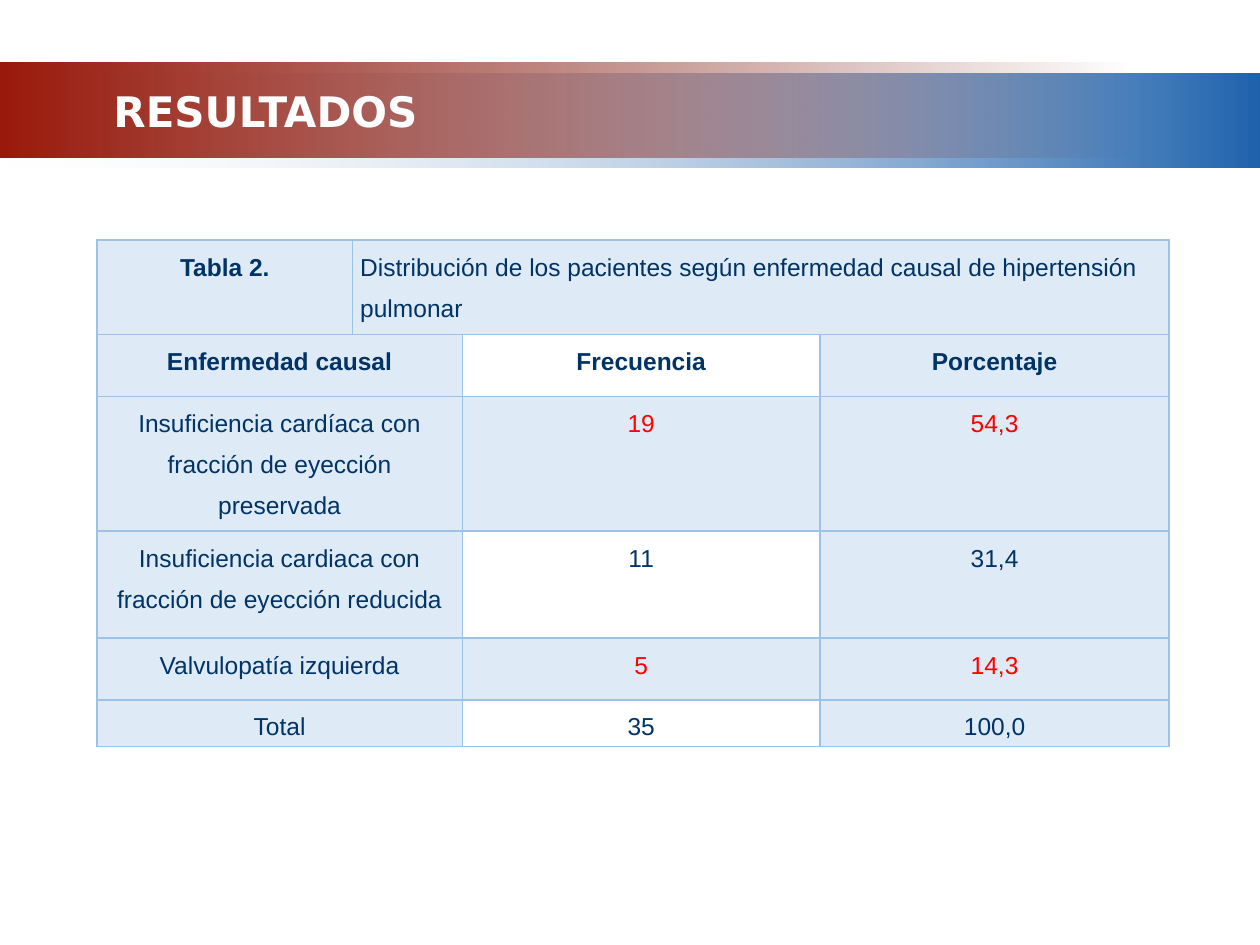
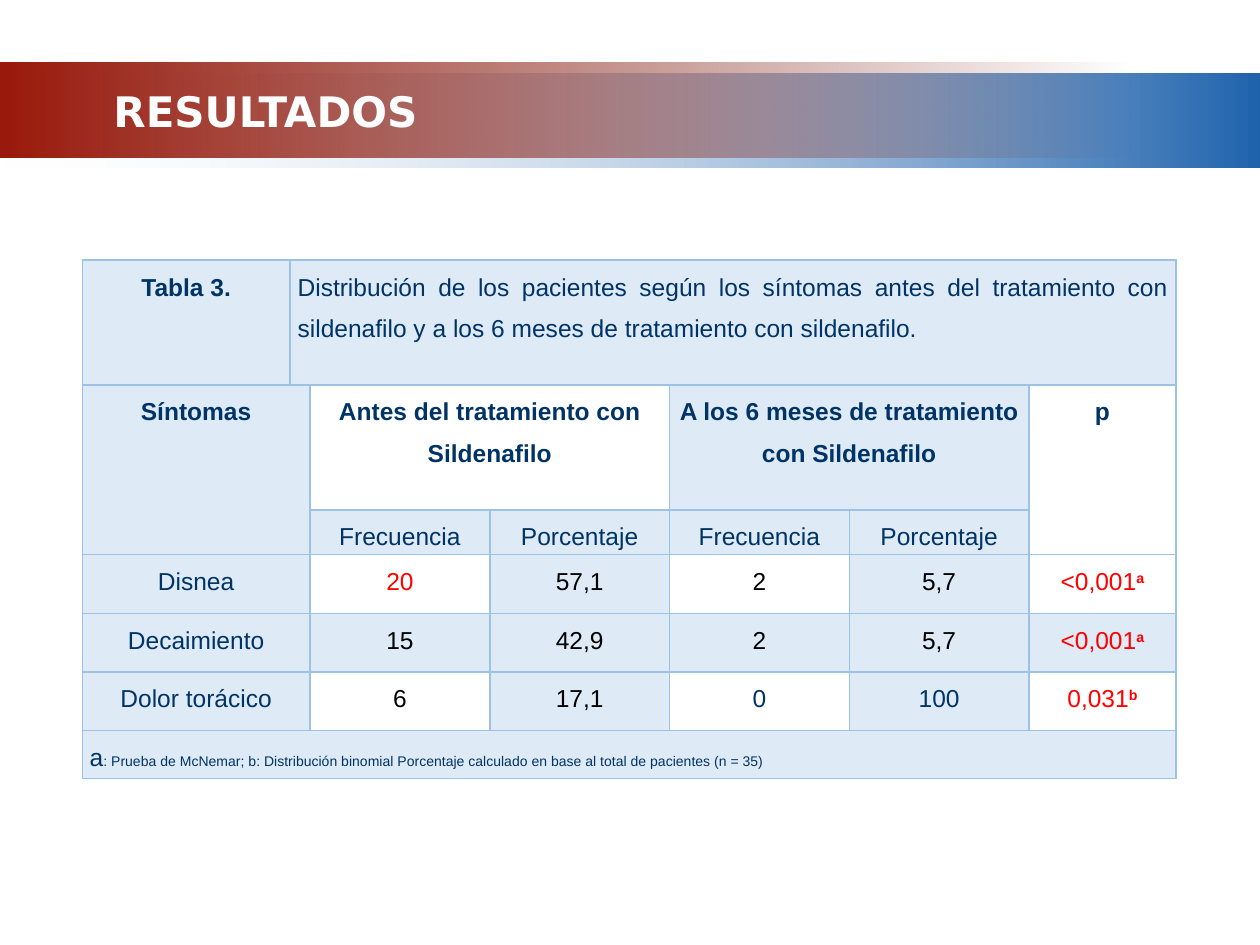
import pptx
import pptx.dml.color
import pptx.enum.shapes
import pptx.enum.text
import pptx.oxml
import pptx.oxml.ns
import pptx.util
from lxml import etree

Pt = pptx.util.Pt
ALIGN = pptx.enum.text.PP_ALIGN

COLORS = {
    "navy": "003366", "red": "FF0000", "black": "000000", "white": "FFFFFF",
    "pale": "DEEAF6", "border": "9CC2E5",
    "mist": "F1F2F7", "blue": "1F63AD", "brick": "99190B", "maroon": "6D1208",
}
TITLE = "RESULTADOS"
# left, top, width, height, then (colour, opacity %) at each end
BANDS = [
    (0, 42, 720, 54, ("mist", 0), ("blue", 100)),
    (0, 36, 648, 54, ("brick", 100), ("maroon", 0)),
]

HEAD = {"bold": True}
RED = {"color": "red"}
BLACK = {"color": "black"}
LEFT = {"align": ALIGN.LEFT}
JUSTIFY = {"align": ALIGN.JUSTIFY}
MARK = {"bold": True, "raised": True}

# A cell is (text or list of runs, format); None is covered by a merged cell.
# Spans are (row, column): (rows, columns).
TABLES = [
    {
        "at": (55.4, 137.2),
        "widths": [146.2, 62.6, 204.5, 199.4],
        "heights": [54, 35.3, 77, 61.2, 35.3, 26.6],
        "spans": {(0, 1): (1, 3), **{(row, 0): (1, 2) for row in range(1, 6)}},
        "pale": [],
        "rows": [
            [("Tabla 2.", HEAD),
             ("Distribución de los pacientes según enfermedad causal de "
              "hipertensión pulmonar", LEFT), None, None],
            [("Enfermedad causal", HEAD), None, ("Frecuencia", HEAD), ("Porcentaje", HEAD)],
            [("Insuficiencia cardíaca con fracción de eyección preservada", {}), None,
             ("19", RED), ("54,3", RED)],
            [("Insuficiencia cardiaca con fracción de eyección reducida", {}), None,
             ("11", {}), ("31,4", {})],
            [("Valvulopatía izquierda", {}), None, ("5", RED), ("14,3", RED)],
            [("Total", {}), None, ("35", {}), ("100,0", {})],
        ],
    },
    {
        "at": (47, 148.6),
        "widths": [118.8, 10.8] + [102.7] * 4 + [84],
        "heights": [71.4, 71.4, 25.6, 33.6, 33.4, 33.6, 27.4],
        "spans": {(0, 1): (1, 6), (1, 0): (2, 2), (1, 2): (1, 2), (1, 4): (1, 2),
                  (1, 6): (2, 1), (6, 0): (1, 7),
                  **{(row, 0): (1, 2) for row in range(3, 6)}},
        "pale": [(1, 4)],
        "rows": [
            [("Tabla 3.", HEAD),
             ("Distribución de los pacientes según los síntomas antes del tratamiento "
              "con sildenafilo y a los 6 meses de tratamiento con sildenafilo.", JUSTIFY),
             None, None, None, None, None],
            [("Síntomas", HEAD), None, ("Antes del tratamiento con Sildenafilo", HEAD), None,
             ("A los 6 meses de tratamiento con Sildenafilo", HEAD), None, ("p", HEAD)],
            [None, None] + [("Frecuencia", {}), ("Porcentaje", {})] * 2 + [None],
            [("Disnea", {}), None, ("20", RED), ("57,1", BLACK), ("2", BLACK),
             ("5,7", BLACK), (["<0,001", ("a", MARK)], RED)],
            [("Decaimiento", {}), None, ("15", BLACK), ("42,9", BLACK), ("2", BLACK),
             ("5,7", BLACK), (["<0,001", ("a", MARK)], RED)],
            [("Dolor torácico", {}), None, ("6", BLACK), ("17,1", BLACK), ("0", {}),
             ("100", {}), (["0,031", ("b", MARK)], RED)],
            [(["a", (": Prueba de McNemar; b: Distribución binomial Porcentaje calculado "
                     "en base al total de pacientes (n = 35)", {"size": 8})], JUSTIFY)]
            + [None] * 6,
        ],
    },
]


def rgb(name):
    return pptx.dml.color.RGBColor.from_string(COLORS[name])


def write(frame, content, align=ALIGN.CENTER, spacing=1.0, gap=0, **style):
    """Fill a text frame with one paragraph; a run may override the style."""
    paragraph = frame.paragraphs[0]
    paragraph.alignment = align
    paragraph.line_spacing = spacing
    paragraph.space_after = Pt(gap)
    for part in [content] if isinstance(content, str) else content:
        text, own = (part, {}) if isinstance(part, str) else part
        look = {"font": "Arial", "size": 14, "color": "navy", "bold": False, **style, **own}
        run = paragraph.add_run()
        run.text = text
        run.font.name = look["font"]
        run.font.size = Pt(look["size"])
        run.font.bold = look["bold"]
        run.font.color.rgb = rgb(look["color"])
        if look.get("raised"):
            run.font._element.set("baseline", "30000")


def add_band(slide, left, top, width, height, *ends):
    band = slide.shapes.add_shape(pptx.enum.shapes.MSO_SHAPE.RECTANGLE,
                                  Pt(left), Pt(top), Pt(width), Pt(height))
    band.shadow.inherit = False
    band.line.fill.background()
    band.fill.gradient()
    band.fill.gradient_angle = 0
    for stop, (color, _) in zip(band.fill.gradient_stops, ends):
        stop.color.rgb = rgb(color)
    tints = band._element.spPr.findall(".//" + pptx.oxml.ns.qn("a:srgbClr"))
    for tint, (_, opacity) in zip(tints, ends):
        alpha = etree.SubElement(tint, pptx.oxml.ns.qn("a:alpha"))
        alpha.set("val", str(opacity * 1000))


def add_borders(cell):
    properties = cell._tc.get_or_add_tcPr()
    for side in ("lnL", "lnR", "lnT", "lnB"):
        properties.append(pptx.oxml.parse_xml(
            f'<a:{side} {pptx.oxml.ns.nsdecls("a")} w="{Pt(1)}"><a:solidFill>'
            f'<a:srgbClr val="{COLORS["border"]}"/></a:solidFill></a:{side}>'))


def add_results(slide, content):
    widths, heights = content["widths"], content["heights"]
    left, top = content["at"]
    table = slide.shapes.add_table(len(heights), len(widths), Pt(left), Pt(top),
                                   Pt(sum(widths)), Pt(sum(heights))).table
    table.first_row = table.horz_banding = False
    for column, width in zip(table.columns, widths):
        column.width = Pt(width)
    for row, height in zip(table.rows, heights):
        row.height = Pt(height)
    for (r, c), (down, across) in content["spans"].items():
        table.cell(r, c).merge(table.cell(r + down - 1, c + across - 1))

    for r, row in enumerate(content["rows"]):
        for c, entry in enumerate(row):
            cell = table.cell(r, c)
            cell.margin_left = cell.margin_right = Pt(4.3)
            cell.margin_top = cell.margin_bottom = 0
            add_borders(cell)
            # Odd rows leave every second column white.
            if r % 2 and c and c % 2 == 0 and (r, c) not in content["pale"]:
                cell.fill.background()
            else:
                cell.fill.solid()
                cell.fill.fore_color.rgb = rgb("pale")
            if entry:
                text, style = entry
                write(cell.text_frame, text, spacing=1.5, gap=6, **style)
                cell.text_frame.paragraphs[0].space_before = Pt(6 if r < 0 else 0)


def add_title(slide):
    title = slide.shapes.add_textbox(Pt(8), Pt(46), Pt(287.3), Pt(34.6)).text_frame
    title.word_wrap = True
    title.vertical_anchor = pptx.enum.text.MSO_ANCHOR.MIDDLE
    write(title, TITLE, font="DejaVu Sans", size=24, color="white", bold=True)


def main():
    deck = pptx.Presentation()
    deck.slide_width, deck.slide_height = Pt(720), Pt(540)
    for content in TABLES:
        slide = deck.slides.add_slide(deck.slide_layouts[6])
        for band in BANDS:
            add_band(slide, *band)
        add_results(slide, content)
        add_title(slide)
    deck.save("out.pptx")


if __name__ == "__main__":
    main()
